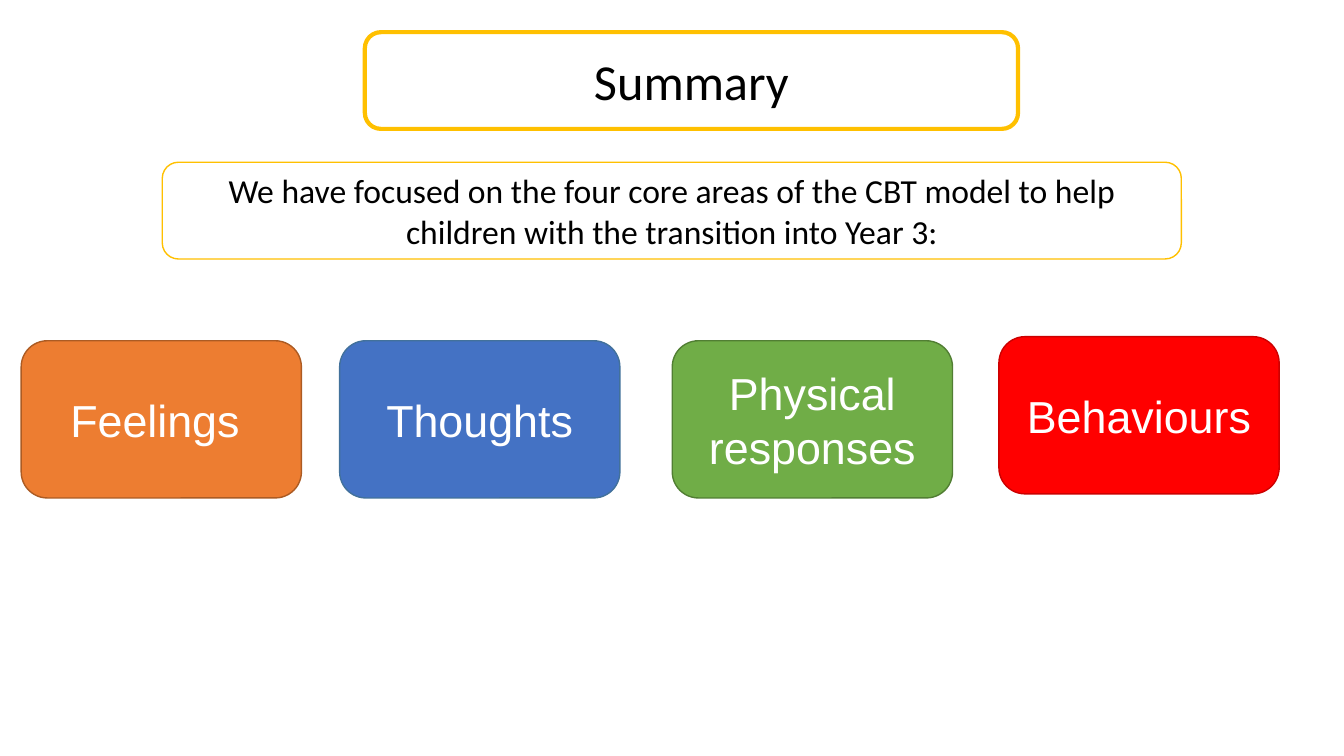
from pptx import Presentation
from pptx.dml.color import RGBColor
from pptx.enum.shapes import MSO_SHAPE
from pptx.enum.text import MSO_ANCHOR, MSO_AUTO_SIZE, PP_ALIGN
from pptx.util import Pt

ROUNDED = MSO_SHAPE.ROUNDED_RECTANGLE
MIDDLE = MSO_ANCHOR.MIDDLE
CENTER = PP_ALIGN.CENTER
NO_AUTOFIT = MSO_AUTO_SIZE.NONE

WHITE = RGBColor(0xFF, 0xFF, 0xFF)
BLACK = RGBColor(0, 0, 0)
GOLD = RGBColor(0xFF, 0xC0, 0x00)
ORANGE = RGBColor(0xED, 0x7D, 0x31)
DARK_ORANGE = RGBColor(0xAC, 0x5B, 0x23)
BLUE = RGBColor(0x44, 0x72, 0xC4)
DARK_BLUE = RGBColor(0x42, 0x71, 0x9B)
GREEN = RGBColor(0x70, 0xAD, 0x47)
DARK_GREEN = RGBColor(0x51, 0x7E, 0x33)
RED = RGBColor(0xFF, 0x00, 0x00)
DARK_RED = RGBColor(0xCC, 0x00, 0x00)

HEADING_FONT = "Calibri"
AREA_FONT = "Arial"
AREA_WIDTH, AREA_HEIGHT = 200.2, 112.3

AREAS = [
    ("Feelings ", 15.1, 243.4, ORANGE, DARK_ORANGE),
    ("Thoughts", 242.6, 243.4, BLUE, DARK_BLUE),
    ("Physical responses", 480.2, 243.4, GREEN, DARK_GREEN),
    ("Behaviours", 713.5, 240.5, RED, DARK_RED),
]


class SlideBuilder:
    def __init__(self, page):
        self.page = page

    def add_text(self, box, text, font, size, color):
        frame = box.text_frame
        frame.auto_size = NO_AUTOFIT
        frame.word_wrap = True
        frame.vertical_anchor = MIDDLE
        frame.margin_left = frame.margin_right = Pt(7.2)
        frame.margin_top = frame.margin_bottom = Pt(3.6)
        para = frame.paragraphs[0]
        para.alignment = CENTER
        span = para.add_run()
        span.text = text
        span.font.name = font
        span.font.size = Pt(size)
        span.font.color.rgb = color

    def panel(self, left, top, width, height, fill, line, weight=1):
        box = self.page.shapes.add_shape(
            ROUNDED, Pt(left), Pt(top), Pt(width), Pt(height))
        box.shadow.inherit = False
        box.fill.solid()
        box.fill.fore_color.rgb = fill
        box.line.color.rgb = line
        box.line.width = Pt(weight)
        return box

    def title(self, text, left, top, width, height):
        self.panel(left, top, width, height, WHITE, GOLD, 3)
        box = self.page.shapes.title
        box.left, box.top = Pt(left), Pt(top)
        box.width, box.height = Pt(width), Pt(height)
        self.page.shapes.element.append(box.element)
        self.add_text(box, text, HEADING_FONT, 36, BLACK)

    def statement(self, text, left, top, width, height):
        box = self.panel(left, top, width, height, WHITE, GOLD)
        self.add_text(box, text, HEADING_FONT, 24, BLACK)

    def area(self, text, left, top, fill, line):
        box = self.panel(left, top, AREA_WIDTH, AREA_HEIGHT, fill, line)
        self.add_text(box, text, AREA_FONT, 32, WHITE)


def main():
    deck = Presentation()
    deck.slide_width, deck.slide_height = Pt(960), Pt(540)
    builder = SlideBuilder(deck.slides.add_slide(deck.slide_layouts[5]))
    builder.title("Summary", 260.6, 23, 466.6, 69.1)
    builder.statement(
        "We have focused on the four core areas of the CBT model "
        "to help children with the transition into Year 3:",
        115.9, 115.9, 727.9, 69.1)
    for area in AREAS:
        builder.area(*area)
    deck.save("out.pptx")


if __name__ == "__main__":
    main()
